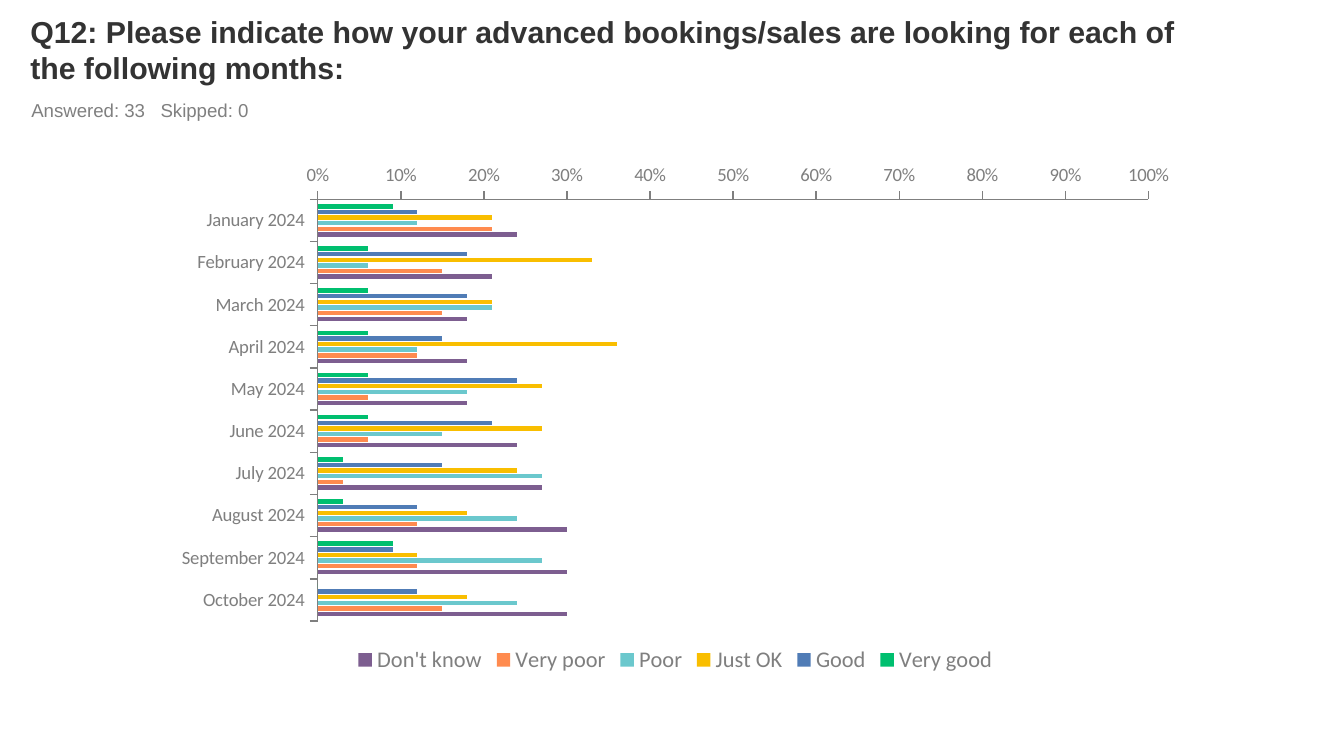
from pptx import Presentation
from pptx.chart.data import CategoryChartData
from pptx.dml.color import RGBColor
from pptx.enum.chart import (XL_CHART_TYPE, XL_LEGEND_POSITION,
                             XL_TICK_LABEL_POSITION, XL_TICK_MARK)
from pptx.enum.text import MSO_ANCHOR, MSO_AUTO_SIZE, PP_ALIGN
from pptx.util import Pt

PX = 4572  # EMU, 200 px to the inch
TITLE_ONLY = 5

BAR_CLUSTERED = XL_CHART_TYPE.BAR_CLUSTERED
LEGEND_BOTTOM = XL_LEGEND_POSITION.BOTTOM
LABELS_LOW = XL_TICK_LABEL_POSITION.LOW
TICK_OUTSIDE = XL_TICK_MARK.OUTSIDE
NO_TICK = XL_TICK_MARK.NONE
LEFT = PP_ALIGN.LEFT
TOP, BOTTOM = MSO_ANCHOR.TOP, MSO_ANCHOR.BOTTOM
NO_AUTOFIT = MSO_AUTO_SIZE.NONE

DARK = RGBColor(0x33, 0x33, 0x33)
GRAY = RGBColor(0x80, 0x80, 0x80)
AXIS_GRAY = RGBColor(0x7F, 0x7F, 0x7F)

MONTHS = ["January", "February", "March", "April", "May", "June",
          "July", "August", "September", "October"]
RATINGS = [
    ("Very good", RGBColor(0x00, 0xBF, 0x6F),
     [0.09, 0.06, 0.06, 0.06, 0.06, 0.06, 0.03, 0.03, 0.09, 0]),
    ("Good", RGBColor(0x50, 0x7C, 0xB6),
     [0.12, 0.18, 0.18, 0.15, 0.24, 0.21, 0.15, 0.12, 0.09, 0.12]),
    ("Just OK", RGBColor(0xF9, 0xBE, 0x00),
     [0.21, 0.33, 0.21, 0.36, 0.27, 0.27, 0.24, 0.18, 0.12, 0.18]),
    ("Poor", RGBColor(0x6B, 0xC8, 0xCD),
     [0.12, 0.06, 0.21, 0.12, 0.18, 0.15, 0.27, 0.24, 0.27, 0.24]),
    ("Very poor", RGBColor(0xFF, 0x8B, 0x4F),
     [0.21, 0.15, 0.15, 0.12, 0.06, 0.06, 0.03, 0.12, 0.12, 0.15]),
    ("Don't know", RGBColor(0x7D, 0x5E, 0x90),
     [0.24, 0.21, 0.18, 0.18, 0.18, 0.24, 0.27, 0.3, 0.3, 0.3]),
]


def box(left, top, width, height):
    return [length * PX for length in (left, top, width, height)]


def set_font(font, name, size, color, bold=False):
    font.name = name
    font.size = Pt(size)
    font.bold = bold
    font.color.rgb = color


def write(shape, text, size, color, anchor, bold=False):
    frame = shape.text_frame
    frame.text = text
    frame.word_wrap = True
    frame.auto_size = NO_AUTOFIT
    frame.vertical_anchor = anchor
    paragraph = frame.paragraphs[0]
    paragraph.alignment = LEFT
    set_font(paragraph.font, "Arial", size, color, bold)


def add_question(slide, text):
    title = slide.shapes.title
    title.left, title.top, title.width, title.height = box(25, 18, 1800, 120)
    write(title, text, 16.2, DARK, BOTTOM, bold=True)


def add_response_count(slide, text):
    count = slide.shapes.add_textbox(*box(27, 138, 1800, 52))
    write(count, text, 10, GRAY, TOP)


def style_axis(axis):
    axis.has_major_gridlines = False
    axis.major_tick_mark = TICK_OUTSIDE
    axis.minor_tick_mark = NO_TICK
    axis.format.line.color.rgb = AXIS_GRAY
    axis.format.line.width = Pt(0.75)
    set_font(axis.tick_labels.font, "Calibri", 10, AXIS_GRAY)


def add_ratings_chart(slide):
    data = CategoryChartData(number_format="0%")
    data.categories = [f"{month} 2024" for month in MONTHS]
    for rating, _, shares in RATINGS:
        data.add_series(rating, shares)
    chart = slide.shapes.add_chart(BAR_CLUSTERED, *box(240, 230, 1530, 780), data).chart
    chart.has_title = False
    set_font(chart.font, "Calibri", 18, DARK)

    plot = chart.plots[0]
    plot.vary_by_categories = False
    plot.gap_width = 219
    plot.overlap = -27
    for series, (_, color, _) in zip(plot.series, RATINGS):
        series.format.fill.solid()
        series.format.fill.fore_color.rgb = color

    months, shares = chart.category_axis, chart.value_axis
    style_axis(months)
    months.reverse_order = True
    months.crosses_at = len(MONTHS) + 1  # below the last month
    months.tick_label_position = LABELS_LOW
    style_axis(shares)
    shares.minimum_scale, shares.maximum_scale = 0, 1
    shares.major_unit = 0.1
    shares.tick_labels.number_format = "0%"
    shares.tick_labels.number_format_is_linked = False

    chart.has_legend = True
    chart.legend.position = LEGEND_BOTTOM
    chart.legend.include_in_layout = False
    set_font(chart.legend.font, "Calibri", 12, AXIS_GRAY)


def main():
    deck = Presentation()
    deck.slide_width, deck.slide_height = 2000 * PX, 1125 * PX
    slide = deck.slides.add_slide(deck.slide_layouts[TITLE_ONLY])
    add_question(slide, "Q12: Please indicate how your advanced bookings/sales "
                        "are looking for each of the following months:")
    add_response_count(slide, "Answered: 33   Skipped: 0")
    add_ratings_chart(slide)
    deck.save("out.pptx")


if __name__ == "__main__":
    main()
